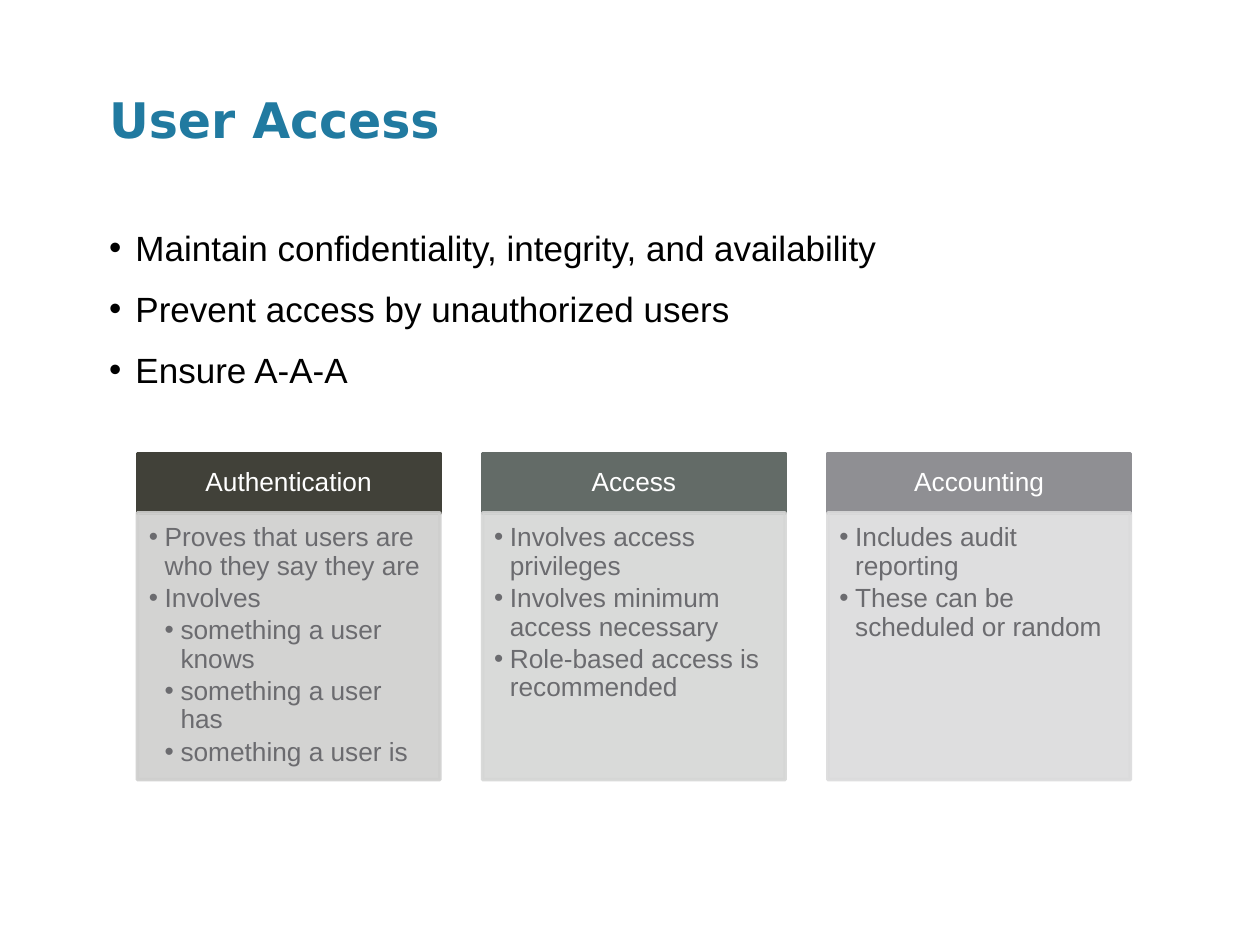
from lxml import etree
from pptx import Presentation
from pptx.dml.color import RGBColor
from pptx.enum.shapes import MSO_SHAPE
from pptx.enum.text import MSO_ANCHOR, MSO_AUTO_SIZE, PP_ALIGN
from pptx.oxml.ns import qn
from pptx.util import Cm, Pt

RECTANGLE = MSO_SHAPE.RECTANGLE
TOP, MIDDLE = MSO_ANCHOR.TOP, MSO_ANCHOR.MIDDLE
NO_AUTOFIT = MSO_AUTO_SIZE.NONE
LEFT, CENTER = PP_ALIGN.LEFT, PP_ALIGN.CENTER

TITLE_FONT = {"name": "DejaVu Sans", "size": Pt(28), "bold": True}
GOAL_FONT = {"name": "Arial", "size": Pt(20)}
COLUMN_FONT = {"name": "Arial", "size": Pt(15)}

GOALS = [
    "Maintain confidentiality, integrity, and availability",
    "Prevent access by unauthorized users",
    "Ensure A-A-A",
]
# Heading, heading colour, panel colour, list of (level, text)
COLUMNS = [
    ("Authentication", "414139", "CFCFCE", [
        (1, "Proves that users are who they say they are"),
        (1, "Involves"),
        (2, "something a user knows"),
        (2, "something a user has"),
        (2, "something a user is"),
    ]),
    ("Access", "636B67", "D5D6D5", [
        (1, "Involves access privileges"),
        (1, "Involves minimum access necessary"),
        (1, "Role-based access is recommended"),
    ]),
    ("Accounting", "8F8F93", "DBDBDC", [
        (1, "Includes audit reporting"),
        (1, "These can be scheduled or random"),
    ]),
]


def rgb(color):
    return RGBColor.from_string(color)


def apply(target, values):
    for name, value in values.items():
        setattr(target, name, value)


def set_frame(frame, insets, anchor):
    """Insets are left, top, right and bottom in centimetres."""
    sides = ("margin_left", "margin_top", "margin_right", "margin_bottom")
    apply(frame, {side: Cm(inset) for side, inset in zip(sides, insets)})
    apply(frame, {"word_wrap": True, "auto_size": NO_AUTOFIT,
                  "vertical_anchor": anchor})


def write(para, text, font, color, layout):
    apply(para, layout)
    span = para.add_run()
    span.text = text
    apply(span.font, font)
    span.font.color.rgb = rgb(color)


def add_bullet(para, margin, hanging):
    properties = para._p.get_or_add_pPr()
    properties.set("marL", str(Cm(margin)))
    properties.set("indent", str(-Cm(hanging)))
    etree.SubElement(properties, qn("a:buFont"), typeface="Arial")
    etree.SubElement(properties, qn("a:buChar"), char="•")


def next_para(frame, index):
    return frame.add_paragraph() if index else frame.paragraphs[0]


def place(shape, left, top, width, height):
    apply(shape, {"left": Cm(left), "top": Cm(top),
                  "width": Cm(width), "height": Cm(height)})


def fill_title(title, left, top, width, height):
    place(title, left, top, width, height)
    set_frame(title.text_frame, (0.22, 0.2, 0.22, 0.13), TOP)
    write(title.text_frame.paragraphs[0], "User Access", TITLE_FONT, "217AA0",
          {"alignment": LEFT})


def fill_goals(body, left, top, width, height):
    place(body, left, top, width, height)
    frame = body.text_frame
    set_frame(frame, (0.22, 0.17, 0.22, 0.13), TOP)
    for index, goal in enumerate(GOALS):
        para = next_para(frame, index)
        add_bullet(para, 0.53, 0.53)
        write(para, goal, GOAL_FONT, "000000",
              {"space_before": Pt(4.8 if index else 0), "space_after": Pt(6)})


def add_panel(page, color, left, top, width, height, opacity=100):
    panel = page.shapes.add_shape(RECTANGLE, Cm(left), Cm(top),
                                  Cm(width), Cm(height))
    panel.shadow.inherit = False
    panel.line.width = Pt(2)
    for fill in (panel.fill, panel.line.fill):
        fill.solid()
        fill.fore_color.rgb = rgb(color)
    if opacity < 100:
        for tone in panel._element.spPr.iter(qn("a:srgbClr")):
            etree.SubElement(tone, qn("a:alpha"), val=str(opacity * 1000))
    return panel


def add_column(page, column, left, top, width, height):
    heading, heading_color, panel_color, items = column
    heading_height = 1.2
    header = add_panel(page, heading_color, left, top, width, heading_height)
    set_frame(header.text_frame, (0.3, 0.18, 0.3, 0.18), MIDDLE)
    write(header.text_frame.paragraphs[0], heading, COLUMN_FONT, "FFFFFF",
          {"alignment": CENTER, "line_spacing": 0.9})

    panel = add_panel(page, panel_color, left, top + heading_height,
                      width, height - heading_height, opacity=90)
    set_frame(panel.text_frame, (0.23, 0.23, 0.3, 0.33), TOP)
    for index, (level, text) in enumerate(items):
        para = next_para(panel.text_frame, index)
        add_bullet(para, 0.32 * level, 0.32)
        write(para, text, COLUMN_FONT, "6B6B6F",
              {"level": level, "alignment": LEFT, "line_spacing": 0.9,
               "space_after": Pt(2.25)})


def add_columns(page, left, top, width, height):
    column_width = 6.1
    step = (width - column_width) / (len(COLUMNS) - 1)
    for index, column in enumerate(COLUMNS):
        add_column(page, column, left + index * step, top, column_width, height)


def main():
    deck = Presentation()
    apply(deck, {"slide_width": Cm(25.4), "slide_height": Cm(19.05)})
    page = deck.slides.add_slide(deck.slide_layouts[1])
    fill_title(page.shapes.title, 1.98, 1.6, 22.15, 2.24)
    fill_goals(page.placeholders[1], 1.98, 4.39, 22.15, 9.65)
    add_columns(page, 2.77, 9.14, 20.02, 6.58)
    deck.save("out.pptx")


if __name__ == "__main__":
    main()
